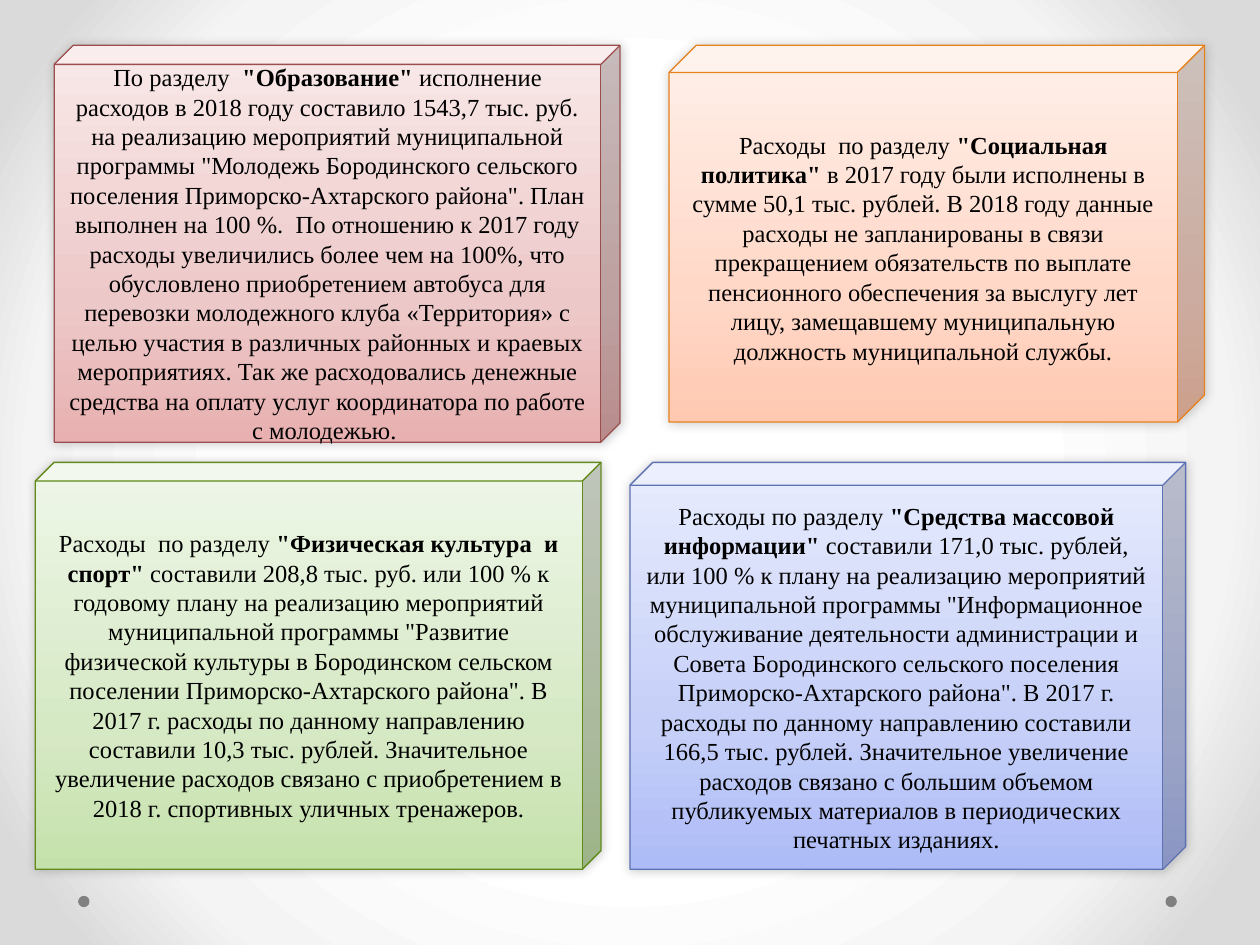
from lxml import etree
from pptx import Presentation
from pptx.dml.color import RGBColor
from pptx.enum import shapes, text
from pptx.oxml import ns
from pptx.util import Inches, Pt

BLACK = RGBColor(0, 0, 0)
GRAY = RGBColor(0x80, 0x80, 0x80)
ROSE = RGBColor(0x9A, 0x4E, 0x4E)
AMBER = RGBColor(0xE6, 0x81, 0x1C)
GREEN = RGBColor(0x62, 0x89, 0x1C)
BLUE = RGBColor(0x5C, 0x72, 0xB2)
FONT = {"name": "Times New Roman", "size": Pt(14)}
FRAME = {"word_wrap": True, "vertical_anchor": text.MSO_ANCHOR.MIDDLE}
BACK = [(50, "FFFFFF"), (76, "F4F4F4"), (92, "DADADA")]
STOPS = (0, 35, 100)
DOTS = [(0.62, 7.11), (9.25, 7.11)]

CARDS = [
    {
        "box": (0.43, 0.36, 4.49, 3.15), "depth": 0.048, "line": ROSE,
        "tones": ("E8B0B0", "EDC8C8", "F9E9E9"),
        "text": (
            "По разделу  ", '"Образование"',
            " исполнение расходов в 2018 году составило 1543,7 тыс. руб. "
            "на реализацию мероприятий муниципальной программы "
            '"Молодежь Бородинского сельского поселения '
            'Приморско-Ахтарского района". План выполнен на 100 %.  '
            "По отношению к 2017 году расходы увеличились более чем на 100%, "
            "что обусловлено приобретением автобуса для перевозки "
            "молодежного клуба «Территория» с целью участия в различных "
            "районных и краевых мероприятиях. Так же расходовались денежные "
            "средства на оплату услуг координатора по работе с молодежью. "),
    },
    {
        "box": (5.31, 0.36, 4.25, 2.99), "depth": 0.072, "line": AMBER,
        "tones": ("FFC9B1", "FFD8C8", "FFF0EA"),
        "text": (
            "Расходы  по разделу ", '"Социальная политика"',
            " в 2017 году были исполнены в сумме 50,1 тыс. рублей. "
            "В 2018 году данные расходы не запланированы в связи "
            "прекращением обязательств по выплате пенсионного обеспечения "
            "за выслугу лет лицу, замещавшему муниципальную должность "
            "муниципальной службы."),
    },
    {
        "box": (0.28, 3.67, 4.49, 3.23), "depth": 0.046, "line": GREEN,
        "tones": ("C5E1AB", "D6E9C5", "EFF7E9"),
        "text": (
            "Расходы  по разделу ", '"Физическая культура  и спорт"',
            " составили 208,8 тыс. руб. или 100 % к годовому плану "
            "на реализацию мероприятий муниципальной программы "
            '"Развитие физической культуры в Бородинском сельском поселении '
            'Приморско-Ахтарского района". В 2017 г. расходы по данному '
            "направлению составили 10,3 тыс. рублей. Значительное увеличение "
            "расходов связано с приобретением в 2018 г. спортивных уличных "
            "тренажеров."),
    },
    {
        "box": (5, 3.67, 4.41, 3.23), "depth": 0.056, "line": BLUE,
        "tones": ("ADBBF6", "C5CFF8", "E8ECFD"),
        "text": (
            "Расходы по разделу ", '"Средства массовой информации" ',
            "составили 171,0 тыс. рублей, или 100 % к плану на реализацию "
            'мероприятий муниципальной программы "Информационное '
            "обслуживание деятельности администрации и Совета Бородинского "
            'сельского поселения Приморско-Ахтарского района". В 2017 г. '
            "расходы по данному направлению составили 166,5 тыс. рублей. "
            "Значительное увеличение расходов связано с большим объемом "
            "публикуемых материалов в периодических печатных изданиях."),
    },
]


def put(item, values):
    for key, value in values.items():
        setattr(item, key, value)


def add(root, tag, **attrs):
    node = etree.SubElement(root, ns.qn(tag))
    for key, value in attrs.items():
        node.set(key, str(value))
    return node


def blend(fill, root, stops, angle=None):
    fill.gradient()
    grad = next(root.iter(ns.qn("a:gradFill")))
    for node in list(grad):
        grad.remove(node)
    group = add(grad, "a:gsLst")
    for pos, tone in stops:
        add(add(group, "a:gs", pos=pos * 1000), "a:srgbClr", val=tone)
    if angle is None:
        ring = add(grad, "a:path", path="circle")
        add(ring, "a:fillToRect", l=50000, t=50000, r=50000, b=50000)
    else:
        add(grad, "a:lin", ang=angle * 60000, scaled=0)


def shade(shape):
    shape.shadow.inherit = False
    glow = next(shape._element.iter(ns.qn("a:effectLst")))
    cast = add(glow, "a:outerShdw", blurRad=Pt(6), dist=0,
               dir=315 * 60000, rotWithShape=0)
    add(add(cast, "a:srgbClr", val="000000"), "a:alpha", val=20000)


def draw(slide, card):
    box = [Inches(n) for n in card["box"]]
    cube = slide.shapes.add_shape(shapes.MSO_SHAPE.CUBE, *box)
    cube.adjustments[0] = card["depth"]
    blend(cube.fill, cube._element, zip(STOPS, card["tones"]), 270)
    cube.line.color.rgb = card["line"]
    cube.line.width = Pt(0.75)
    shade(cube)
    put(cube.text_frame, FRAME)
    para = cube.text_frame.paragraphs[0]
    para.alignment = text.PP_ALIGN.CENTER
    for part, bold in zip(card["text"], (False, True, False)):
        run = para.add_run()
        run.text = part
        put(run.font, {**FONT, "bold": bold})
        run.font.color.rgb = BLACK


def main():
    deck = Presentation()
    put(deck, {"slide_width": Inches(10), "slide_height": Inches(7.5)})
    slide = deck.slides.add_slide(deck.slide_layouts[6])
    blend(slide.background.fill, slide._element, BACK)
    for x, y in DOTS:
        dot = slide.shapes.add_shape(
            shapes.MSO_SHAPE.OVAL, Inches(x), Inches(y),
            Inches(0.09), Inches(0.09))
        dot.shadow.inherit = False
        dot.fill.solid()
        dot.fill.fore_color.rgb = GRAY
        dot.line.fill.background()
    for card in CARDS:
        draw(slide, card)
    deck.save("out.pptx")


if __name__ == "__main__":
    main()
